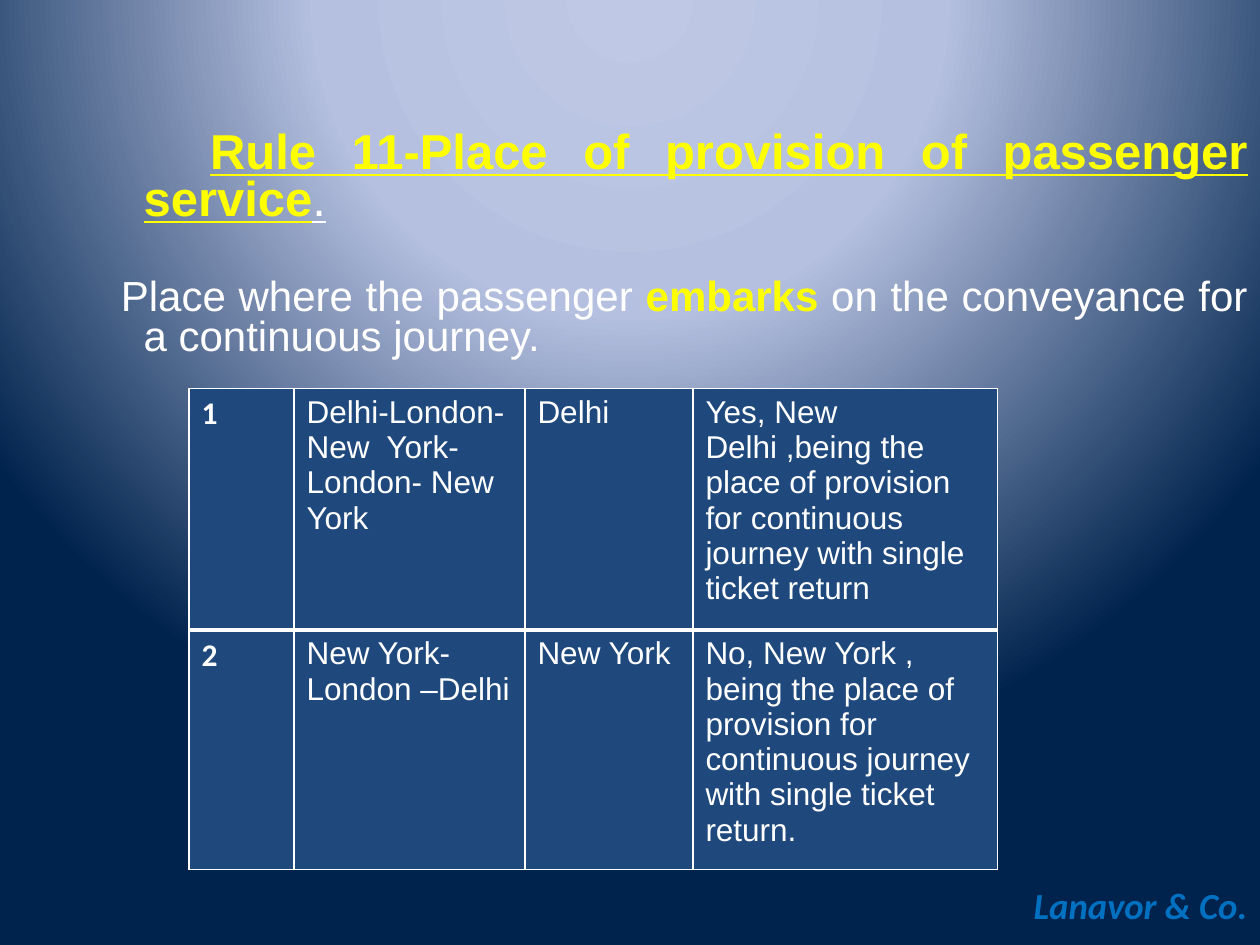
from lxml.etree import SubElement
from pptx import Presentation
from pptx.dml.color import RGBColor
from pptx.enum.text import PP_ALIGN
from pptx.oxml import parse_xml
from pptx.oxml.ns import nsdecls, qn
from pptx.util import Pt

WHITE = RGBColor(0xFF, 0xFF, 0xFF)
YELLOW = RGBColor(0xFF, 0xFF, 0x00)
SIGNATURE_BLUE = RGBColor(0x00, 0x70, 0xC0)
CELL_BLUE = RGBColor(0x1F, 0x49, 0x7D)
GLOW_STOPS = [
    (0, RGBColor(0xBF, 0xC9, 0xE5)),
    (40, RGBColor(0xB5, 0xC0, 0xE0)),
    (100, RGBColor(0x00, 0x23, 0x4D)),
]

SIGNATURE = "Lanavor & Co."
HEADING = {"size": 28, "color": YELLOW, "bold": True, "underline": True}
RULE_TEXT = [
    {
        "first_line": 38,
        "before": 4,
        "runs": [
            ("Rule 11-Place of provision of passenger service", HEADING),
            (".", {"size": 28, "underline": True}),
        ],
    },
    {
        "first_line": -13,
        "before": 30,
        "runs": [
            ("Place where the passenger ", {"size": 24}),
            ("embarks", {"size": 24, "color": YELLOW, "bold": True}),
            (" on the conveyance for a continuous journey.", {"size": 24}),
        ],
    },
]
JOURNEYS = [
    ("1", "Delhi-London-New  York-London- New York", "Delhi",
     "Yes, New Delhi ,being the place of provision for continuous journey with single ticket return"),
    ("2", "New York-London –Delhi", "New York",
     "No, New York , being the place of provision for continuous journey with single ticket return."),
]
COLUMN_WIDTHS = [60, 132, 96, 174]
ROW_HEIGHTS = [138, 126]


def add_text(paragraph, text, size=18, font="Arial", color=WHITE, bold=False, italic=False, underline=False):
    run = paragraph.add_run()
    run.text = text
    run.font.size = Pt(size)
    run.font.name = font
    run.font.color.rgb = color
    run.font.bold = bold
    run.font.italic = italic
    run.font.underline = underline


def paint_glow(slide):
    slide.background.fill.gradient()
    old = next(slide.background._cSld.iter(qn("a:gradFill")))
    stops = "".join(
        f'<a:gs pos="{percent * 1000}"><a:srgbClr val="{color}"/></a:gs>' for percent, color in GLOW_STOPS
    )
    glow = parse_xml(
        f'<a:gradFill rotWithShape="1" {nsdecls("a")}><a:gsLst>{stops}</a:gsLst>'
        '<a:path path="circle"><a:fillToRect l="50000" t="-80000" r="50000" b="180000"/></a:path>'
        '</a:gradFill>'
    )
    old.getparent().replace(old, glow)


def set_borders(cell, **widths):
    properties = cell._tc.get_or_add_tcPr()
    for position, side in enumerate(("L", "R", "T", "B")):
        line = parse_xml(f'<a:ln{side} w="{Pt(widths.get(side, 1))}" {nsdecls("a")}/>')
        SubElement(SubElement(line, qn("a:solidFill")), qn("a:srgbClr"), val=str(WHITE))
        properties.insert(position, line)


def add_rule_text(slide):
    frame = slide.shapes.add_textbox(Pt(30), Pt(72), Pt(690), Pt(468)).text_frame
    frame.word_wrap = True
    for index, entry in enumerate(RULE_TEXT):
        paragraph = frame.add_paragraph() if index else frame.paragraphs[0]
        paragraph.alignment = PP_ALIGN.JUSTIFY
        paragraph.line_spacing = 0.8
        paragraph.space_before = Pt(entry["before"])
        properties = paragraph._p.get_or_add_pPr()
        properties.set("marL", str(Pt(45)))
        properties.set("indent", str(Pt(entry["first_line"])))
        for text, style in entry["runs"]:
            add_text(paragraph, text, **style)


def add_journeys(slide):
    table = slide.shapes.add_table(
        len(JOURNEYS), len(COLUMN_WIDTHS), Pt(108), Pt(222), Pt(sum(COLUMN_WIDTHS)), Pt(sum(ROW_HEIGHTS))
    ).table
    table.first_row = False
    table.horz_banding = False
    for column, width in zip(table.columns, COLUMN_WIDTHS):
        column.width = Pt(width)
    for row_index, (row, height, journey) in enumerate(zip(table.rows, ROW_HEIGHTS, JOURNEYS)):
        row.height = Pt(height)
        for column_index, (cell, text) in enumerate(zip(row.cells, journey)):
            is_number = column_index == 0
            cell.fill.solid()
            cell.fill.fore_color.rgb = CELL_BLUE
            set_borders(cell, **({"T": 3} if row_index else {"B": 3}))
            add_text(cell.text_frame.paragraphs[0], text,
                     font="Calibri" if is_number else "Arial", bold=is_number)


def add_signature(slide):
    frame = slide.shapes.add_textbox(Pt(576), Pt(501), Pt(144), Pt(32.4)).text_frame
    frame.word_wrap = False
    paragraph = frame.paragraphs[0]
    paragraph.alignment = PP_ALIGN.RIGHT
    add_text(paragraph, SIGNATURE, size=21, font="Calibri", color=SIGNATURE_BLUE, bold=True, italic=True)


def main():
    presentation = Presentation()
    presentation.slide_width = Pt(720)
    presentation.slide_height = Pt(540)
    slide = presentation.slides.add_slide(presentation.slide_layouts[6])
    paint_glow(slide)
    add_signature(slide)
    add_rule_text(slide)
    add_journeys(slide)
    presentation.save("out.pptx")


if __name__ == "__main__":
    main()
